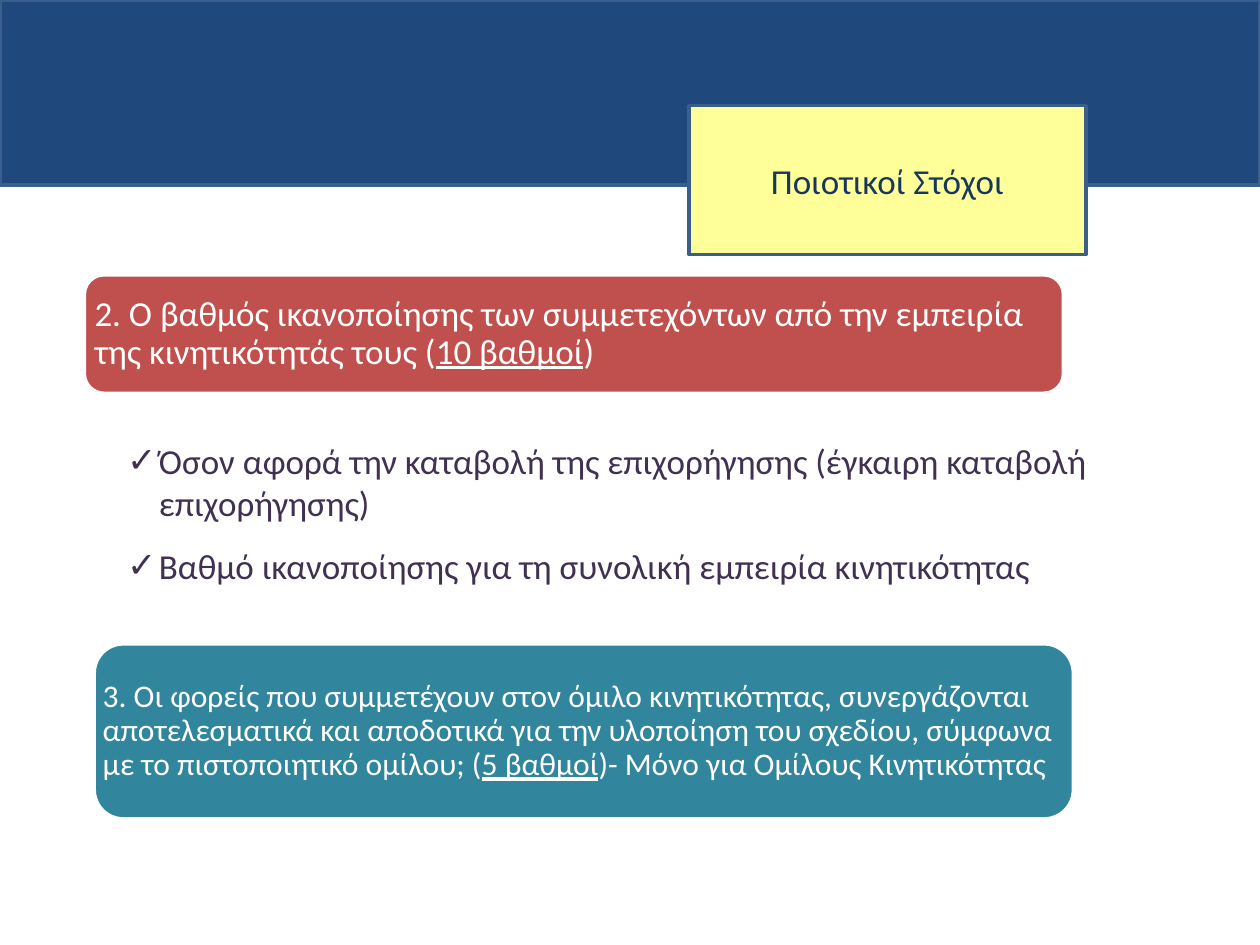
import dataclasses

import lxml.etree
import pptx
import pptx.dml.color
import pptx.enum.shapes
import pptx.enum.text
import pptx.oxml.ns
import pptx.util

Cm = pptx.util.Cm
Pt = pptx.util.Pt
qn = pptx.oxml.ns.qn


@dataclasses.dataclass(frozen=True)
class Theme:
    font: str = "Calibri"
    navy: str = "1F497D"
    outline: str = "3A5F8C"
    yellow: str = "FFFF99"
    heading: str = "17375E"
    red: str = "C0504D"
    teal: str = "31859C"
    white: str = "FFFFFF"
    purple: str = "403152"
    large: int = 20
    medium: int = 18
    line: int = 2


THEME = Theme()


def rgb(value):
    return pptx.dml.color.RGBColor.from_string(value)


def place(element, left, top, width, height):
    element.left, element.top = Cm(left), Cm(top)
    element.width, element.height = Cm(width), Cm(height)


def paint(element, fill, outline):
    element.fill.solid()
    element.fill.fore_color.rgb = rgb(fill)
    element.line.color.rgb = rgb(outline)
    element.line.width = Pt(THEME.line)


def style(font, size, color):
    font.name = THEME.font
    font.size = Pt(size)
    font.color.rgb = rgb(color)


def add_panel(slide, kind, box, fill, outline):
    panel = slide.shapes.add_shape(kind, *map(Cm, box))
    panel.shadow.inherit = False
    paint(panel, fill, outline)
    return panel


def add_heading(slide, text, box):
    heading = slide.shapes.title
    place(heading, *box)
    properties = heading.element.spPr
    geometry = lxml.etree.SubElement(properties, qn("a:prstGeom"), prst="roundRect")
    lxml.etree.SubElement(geometry, qn("a:avLst"))
    paint(heading, THEME.yellow, THEME.outline)
    heading.text_frame.text = text
    heading.text_frame.vertical_anchor = pptx.enum.text.MSO_ANCHOR.MIDDLE
    paragraph = heading.text_frame.paragraphs[0]
    paragraph.alignment = pptx.enum.text.PP_ALIGN.CENTER
    style(paragraph.runs[0].font, THEME.large, THEME.heading)
    slide.shapes.element.append(heading.element)


def add_goal(slide, parts, box, fill, size, inset):
    rounded = pptx.enum.shapes.MSO_SHAPE.ROUNDED_RECTANGLE
    goal = add_panel(slide, rounded, box, fill, THEME.white)
    frame = goal.text_frame
    frame.word_wrap = True
    frame.vertical_anchor = pptx.enum.text.MSO_ANCHOR.MIDDLE
    frame.margin_left = frame.margin_right = Cm(inset)
    frame.margin_top = frame.margin_bottom = Cm(inset)
    paragraph = frame.paragraphs[0]
    paragraph.alignment = pptx.enum.text.PP_ALIGN.LEFT
    paragraph.line_spacing = 0.9
    lead, points, ending = parts
    for text in parts:
        run = paragraph.add_run()
        run.text = text
        style(run.font, size, THEME.white)
        run.font.underline = text == points


def fill_criteria(criteria, items, box):
    place(criteria, *box)
    frame = criteria.text_frame
    frame.text = "\n".join(items)
    frame.word_wrap = True
    frame.auto_size = pptx.enum.text.MSO_AUTO_SIZE.SHAPE_TO_FIT_TEXT
    for index, paragraph in enumerate(frame.paragraphs):
        properties = paragraph._p.get_or_add_pPr()
        properties.set("marL", str(Cm(0.64)))
        properties.set("indent", str(-Cm(0.64)))
        lxml.etree.SubElement(properties, qn("a:buChar"), char="✓")
        paragraph.space_before = Pt(6 if index else 0)
        paragraph.space_after = Pt(6)
        style(paragraph.runs[0].font, THEME.large, THEME.purple)


def main():
    deck = pptx.Presentation()
    deck.slide_width, deck.slide_height = Cm(25.4), Cm(19.05)
    slide = deck.slides.add_slide(deck.slide_layouts[1])

    add_panel(slide, pptx.enum.shapes.MSO_SHAPE.RECTANGLE,
              (0, 0, 25.4, 3.73), THEME.navy, THEME.outline)
    add_heading(slide, "Ποιοτικοί Στόχοι", (13.89, 2.13, 8, 3))
    add_goal(
        slide,
        ("2. Ο βαθμός ικανοποίησης των συμμετεχόντων από την εμπειρία "
         "της κινητικότητάς τους (", "10 βαθμοί", ")"),
        (1.7, 5.54, 19.74, 2.39), THEME.red, THEME.large, 0.09)
    fill_criteria(
        slide.placeholders[1],
        ("Όσον αφορά την καταβολή της επιχορήγησης (έγκαιρη καταβολή επιχορήγησης)",
         "Βαθμό ικανοποίησης για τη συνολική εμπειρία κινητικότητας"),
        (2.31, 8.74, 19.99, 3.25))
    add_goal(
        slide,
        ("3. Οι φορείς που συμμετέχουν στον όμιλο κινητικότητας, συνεργάζονται "
         "αποτελεσματικά και αποδοτικά για την υλοποίηση του σχεδίου, σύμφωνα "
         "με το πιστοποιητικό ομίλου; (", "5 βαθμοί",
         ")- Μόνο για Ομίλους Κινητικότητας"),
        (1.9, 12.98, 19.74, 3.53), THEME.teal, THEME.medium, 0)

    deck.save("out.pptx")


if __name__ == "__main__":
    main()
